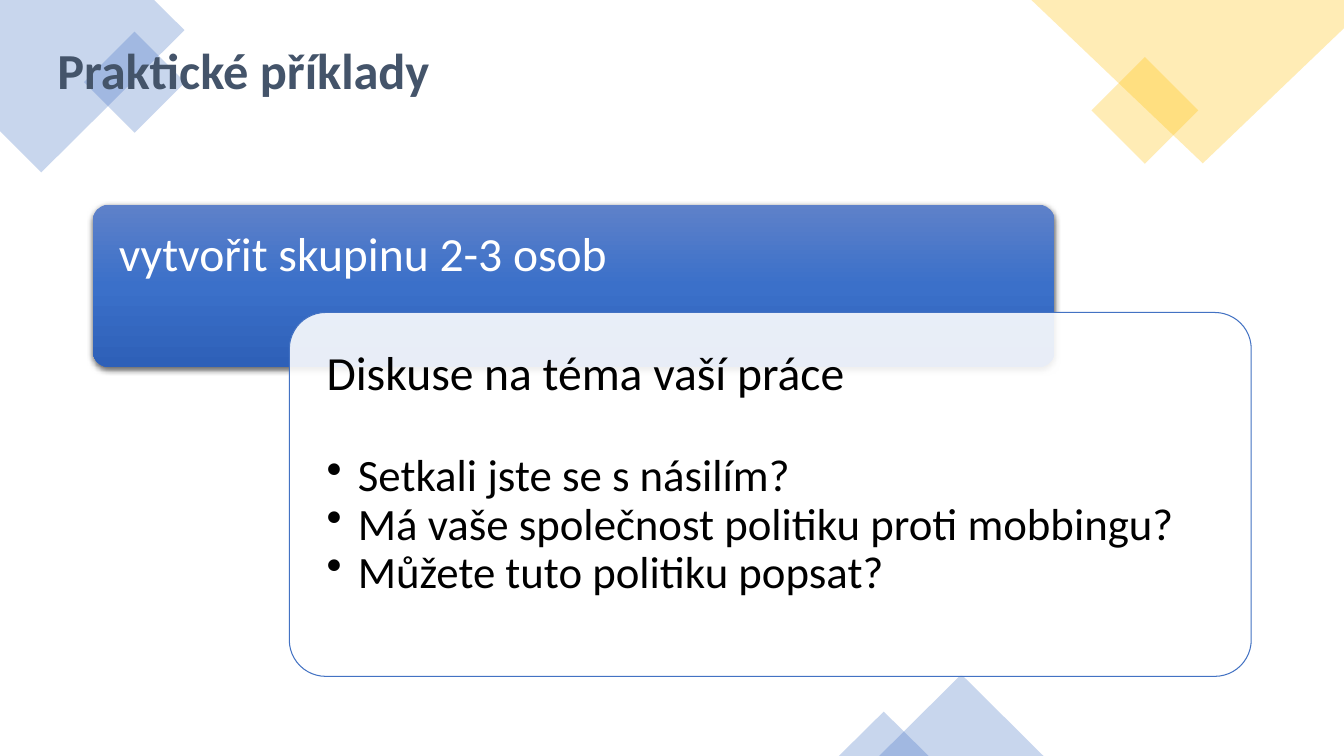
from dataclasses import dataclass

import pptx
import pptx.dml.color
import pptx.enum.shapes
import pptx.enum.text
import pptx.oxml
import pptx.oxml.ns
import pptx.util

PX = 9144  # EMU in one px, 100 px to the inch
FONT = "Calibri"
BLUE, YELLOW, WHITE, BLACK = "4472C4", "FFC000", "FFFFFF", "000000"
DECOR_ALPHA = 29
BULLET_INDENT = 31
QUESTIONS = [
    "Setkali jste se s násilím?",
    "Má vaše společnost politiku proti mobbingu?",
    "Můžete tuto politiku popsat?",
]
Shape = pptx.enum.shapes.MSO_SHAPE
Anchor = pptx.enum.text.MSO_ANCHOR


@dataclass
class Area:
    left: int
    top: int
    width: int
    height: int

    def emu(self) -> list[int]:
        return [n * PX for n in (self.left, self.top, self.width, self.height)]


@dataclass
class Ornament:
    kind: Shape
    area: Area
    colour: str
    rotation: int = 0


@dataclass
class Outline:
    points: list[tuple[int, int]]
    colour: str


OUTLINES = [
    Outline([(153, 0), (0, 0), (0, 130), (41, 171), (183, 30)], BLUE),
    Outline([(1333, 0), (1023, 0), (1193, 162), (1333, 28)], YELLOW),
]
ORNAMENTS = [
    Ornament(Shape.RECTANGLE, Area(98, 46, 71, 71), BLUE, 315),
    Ornament(Shape.RECTANGLE, Area(1098, 72, 75, 75), YELLOW, 315),
    Ornament(Shape.ISOSCELES_TRIANGLE, Area(872, 669, 163, 81), BLUE),
    Ornament(Shape.ISOSCELES_TRIANGLE, Area(832, 706, 89, 44), BLUE),
]


def rgb(colour: str) -> pptx.dml.color.RGBColor:
    return pptx.dml.color.RGBColor.from_string(colour)


def paint(shape, colour: str, alpha: int) -> None:
    """Give a flat, partly transparent fill without line or shadow."""
    shape.shadow.inherit = False
    shape.line.fill.background()
    shape.fill.solid()
    shape.fill.fore_color.rgb = rgb(colour)
    colour_xml = shape.fill._xPr.find(".//" + pptx.oxml.ns.qn("a:srgbClr"))
    colour_xml.append(pptx.oxml.parse_xml(
        f'<a:alpha {pptx.oxml.ns.nsdecls("a")} val="{alpha * 1000}"/>'))


def draw_outline(page, outline: Outline) -> None:
    builder = page.shapes.build_freeform(*outline.points[0], scale=PX)
    builder.add_line_segments(outline.points[1:], close=True)
    paint(builder.convert_to_shape(), outline.colour, DECOR_ALPHA)


def draw_ornament(page, ornament: Ornament) -> None:
    shape = page.shapes.add_shape(ornament.kind, *ornament.area.emu())
    shape.rotation = ornament.rotation
    paint(shape, ornament.colour, DECOR_ALPHA)


def add_card(page, area: Area):
    card = page.shapes.add_shape(Shape.ROUNDED_RECTANGLE, *area.emu())
    card.adjustments[0] = 0.1
    paint(card, WHITE, 89)
    return card


def shade(card, colours: list[str]) -> None:
    """Fill from top to bottom with evenly spaced colours and cast a shadow."""
    card.fill.gradient()
    card.fill.gradient_angle = 270
    properties = card._element.spPr
    stops = properties.find(".//" + pptx.oxml.ns.qn("a:gsLst"))
    for stop in list(stops):
        stops.remove(stop)
    namespace = pptx.oxml.ns.nsdecls("a")
    for index, colour in enumerate(colours):
        position = 100000 * index // (len(colours) - 1)
        stops.append(pptx.oxml.parse_xml(
            f'<a:gs {namespace} pos="{position}"><a:srgbClr val="{colour}"/></a:gs>'))
    blur, distance = pptx.util.Pt(4.5), pptx.util.Pt(1.5)
    properties.find(pptx.oxml.ns.qn("a:effectLst")).append(pptx.oxml.parse_xml(
        f'<a:outerShdw {namespace} blurRad="{blur}" dist="{distance}" dir="5400000"'
        f' rotWithShape="0"><a:srgbClr val="{BLACK}"><a:alpha val="62000"/>'
        '</a:srgbClr></a:outerShdw>'))


def add_frame(page, area: Area, side: int, top: int, bottom: int, anchor=Anchor.TOP):
    frame = page.shapes.add_textbox(*area.emu()).text_frame
    frame.word_wrap = True
    frame.vertical_anchor = anchor
    frame.margin_left = frame.margin_right = side * PX
    frame.margin_top, frame.margin_bottom = top * PX, bottom * PX
    return frame


def write(para, text: str, *, size: int, colour: str, bold: bool = False,
          bullet: bool = False, before: int = 0) -> None:
    if bullet:
        properties = para._p.get_or_add_pPr()
        properties.set("marL", str(BULLET_INDENT * PX))
        properties.set("indent", str(-BULLET_INDENT * PX))
        properties.append(pptx.oxml.parse_xml(
            f'<a:buChar {pptx.oxml.ns.nsdecls("a")} char="•"/>'))
    para.line_spacing = 0.9
    para.space_before = pptx.util.Pt(before)
    span = para.add_run()
    span.text = text
    span.font.name = FONT
    span.font.size = pptx.util.Pt(size)
    span.font.bold = bold
    span.font.color.rgb = rgb(colour)


def main() -> None:
    deck = pptx.Presentation()
    deck.slide_width, deck.slide_height = pptx.util.Inches(13.33), pptx.util.Inches(7.5)
    page = deck.slides.add_slide(deck.slide_layouts[6])

    for outline in OUTLINES:
        draw_outline(page, outline)
    for ornament in ORNAMENTS:
        draw_ornament(page, ornament)

    title = add_frame(page, Area(47, 22, 1150, 102), 10, 5, 5, Anchor.MIDDLE)
    write(title.paragraphs[0], "Praktické příklady", size=36, colour="44546A", bold=True)

    task_card = add_card(page, Area(92, 203, 954, 161))
    shade(task_card, ["5E81C9", "3B70C9", "2E60B8"])
    task = add_frame(page, Area(92, 203, 954, 107), 26, 26, 14)
    write(task.paragraphs[0], "vytvořit skupinu 2-3 osob", size=34, colour=WHITE)

    discussion_card = add_card(page, Area(287, 310, 954, 361))
    discussion_card.line.color.rgb = rgb("4372C3")
    discussion_card.line.width = pptx.util.Pt(0.75)
    discussion = add_frame(page, Area(298, 321, 933, 340), 26, 26, 26)
    write(discussion.paragraphs[0], "Diskuse na téma vaší práce", size=34, colour=BLACK)
    for index, question in enumerate(QUESTIONS):
        write(discussion.add_paragraph(), question, size=32, colour=BLACK,
              bullet=True, before=0 if index else 37)

    deck.save("out.pptx")


if __name__ == "__main__":
    main()
